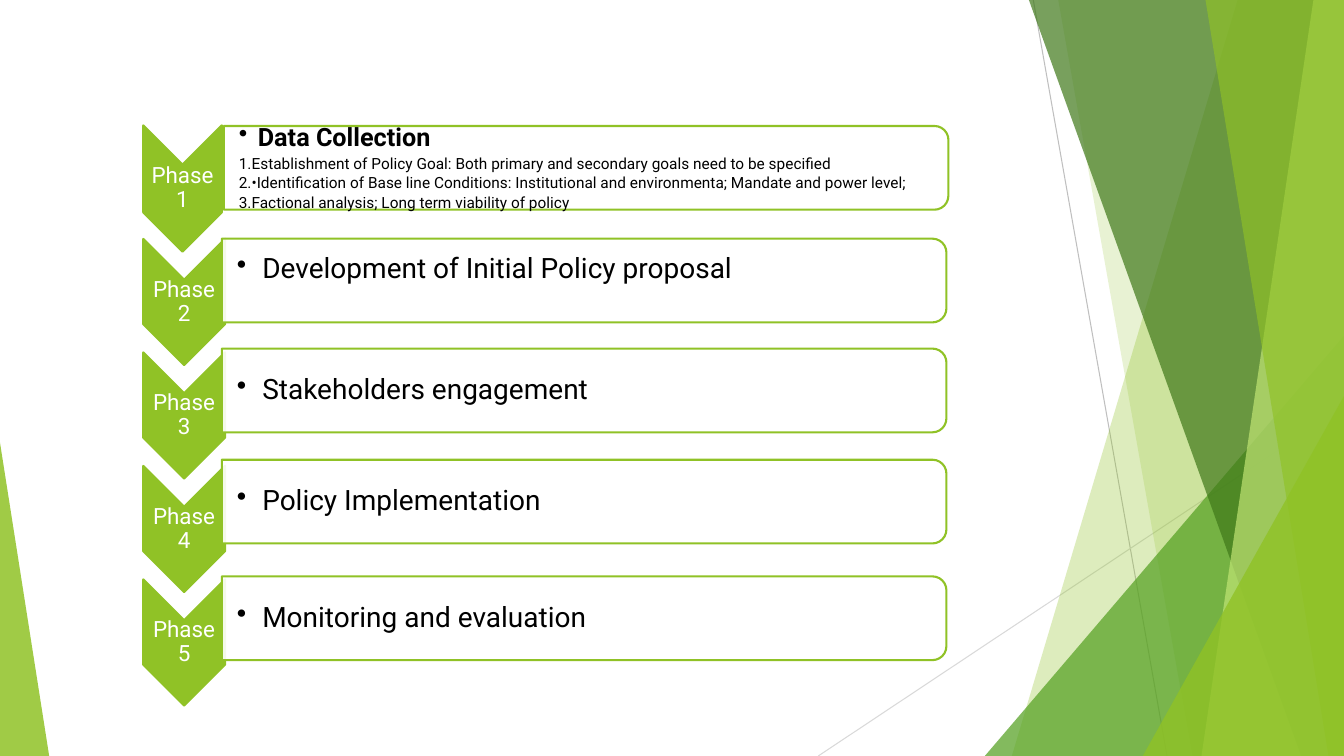
from dataclasses import dataclass

from lxml import etree
from pptx import Presentation
from pptx.dml.color import RGBColor
from pptx.enum.shapes import MSO_CONNECTOR, MSO_SHAPE
from pptx.enum.text import MSO_ANCHOR, PP_ALIGN
from pptx.oxml.ns import qn
from pptx.util import Cm, Pt

CHEVRON = MSO_SHAPE.CHEVRON
BAR = MSO_SHAPE.ROUND_2_SAME_RECTANGLE
WEDGE = MSO_SHAPE.ISOSCELES_TRIANGLE
STRAIGHT = MSO_CONNECTOR.STRAIGHT
MIDDLE = MSO_ANCHOR.MIDDLE
CENTER = PP_ALIGN.CENTER


@dataclass
class Theme:
    font: str = "Roboto"
    lime: str = "90C226"
    green: str = "54A021"
    dark: str = "3F7819"
    pale: str = "C0E474"
    white: str = "FFFFFF"
    black: str = "000000"
    gray: str = "BFBFBF"
    light: str = "D9D9D9"
    label: int = 16
    head: int = 18
    body: int = 20
    small: int = 11


theme = Theme()
WIDE, HIGH = 33.87, 19.05

deck = Presentation()
deck.slide_width, deck.slide_height = Cm(WIDE), Cm(HIGH)
slide = deck.slides.add_slide(deck.slide_layouts[6])
shapes = slide.shapes


def paint(shape, color, alpha=100, edge=None):
    """Fill a shape with a colour of the given opacity and set its outline."""
    shape.shadow.inherit = False
    shape.fill.solid()
    shape.fill.fore_color.rgb = RGBColor.from_string(color)
    if alpha < 100:
        tint = shape.fill._xPr.find(qn("a:solidFill"))[0]
        etree.SubElement(tint, qn("a:alpha"), val=str(alpha * 1000))
    if edge:
        shape.line.color.rgb = RGBColor.from_string(edge)
        shape.line.width = Pt(1.5)
    else:
        shape.line.fill.background()


def write(box, lines, color, left, right, low=0.03):
    """Fill a text box with (text, size, bold, bullet, indent) lines."""
    frame = box.text_frame
    frame.word_wrap = True
    frame.vertical_anchor = MIDDLE
    frame.margin_left, frame.margin_right = Cm(left), Cm(right)
    frame.margin_top, frame.margin_bottom = Cm(0.03), Cm(low)
    for n, (text, size, bold, mark, indent) in enumerate(lines):
        para = frame.add_paragraph() if n else frame.paragraphs[0]
        para.text = text
        para.line_spacing = 0.9
        para.font.name, para.font.size = theme.font, Pt(size)
        para.font.bold = bold
        para.font.color.rgb = RGBColor.from_string(color)
        if not mark:
            para.alignment = CENTER
            continue
        para.space_after = Pt(3 if size > theme.small else 2)
        props = para._p.get_or_add_pPr()
        props.set("marL", str(Cm(indent)))
        props.set("indent", str(-Cm(indent)))
        kind = "a:buChar" if mark == "•" else "a:buAutoNum"
        key = "char" if mark == "•" else "type"
        bullet = etree.Element(qn(kind), {key: mark})
        props.insert_element_before(bullet, "a:tabLst", "a:defRPr", "a:extLst")


# Thin lines behind the bands
for x1, y1, x2, y2, color in (
    (26.04, 0, 29.41, HIGH, theme.gray),
    (WIDE, 10.24, 20.62, HIGH, theme.light),
):
    line = shapes.add_connector(STRAIGHT, Cm(x1), Cm(y1), Cm(x2), Cm(y2))
    line.line.color.rgb = RGBColor.from_string(color)
    line.line.width = Pt(0.75)
    etree.SubElement(line._element.spPr, qn("a:effectLst"))

# Bands run to the right edge: (top x, foot x)
# Wedges stand on the bottom edge: (left, top, width, apex)
for place, color, alpha in (
    ((31.19, 25.5), theme.lime, 30),
    ((26.67, 30.05), theme.lime, 20),
    ((24.82, 8.46, 9.05, 1), theme.green, 72),
    ((25.93, 32.79), theme.dark, 70),
    ((33.1, 30.28), theme.pale, 70),
    ((30.38, 33.48), theme.lime, 65),
    ((28.8, 9.98, 5.07, 1), theme.lime, 80),
    ((0, 11.15, 1.24, 0), theme.lime, 85),
):
    if len(place) == 2:
        top, foot = place
        pen = shapes.build_freeform(Cm(top), 0)
        pen.add_line_segments(
            [(Cm(WIDE), 0), (Cm(WIDE), Cm(HIGH)), (Cm(foot), Cm(HIGH))]
        )
        part = pen.convert_to_shape()
    else:
        x, y, w, apex = place
        part = shapes.add_shape(WEDGE, Cm(x), Cm(y), Cm(w), Cm(HIGH - y))
        part.adjustments[0] = apex
    paint(part, color, alpha)

# Phases: bar middle x and y, chevron breadth, bottom inset, lines
goals = (
    "Establishment of Policy Goal: Both primary and secondary goals need to be specified",
    "•Identification of Base line Conditions: Institutional and environmenta; Mandate and power level;",
    "Factional analysis; Long term viability of policy",
)
first = [("Data Collection", theme.head, True, "•", 0.48)]
first += [(goal, theme.small, False, "arabicPeriod", 0.16) for goal in goals]
phases = [(14.77, 4.23, 1.98, 0.03, first)]
for mid, low, title in (
    (7.07, 0.6, "Development of Initial Policy proposal"),
    (9.84, 0.03, "Stakeholders engagement"),
    (12.64, 0.03, "Policy Implementation"),
    (15.58, 0.03, "Monitoring and evaluation"),
):
    phases.append((14.72, mid, 2.06, low, [(title, theme.body, False, "•", 0.64)]))

LONG, THICK = 18.26, 2.11
REACH, EDGE, PITCH = 3.18, 3.61, 2.86
for n, (x, y, breadth, low, lines) in enumerate(phases):
    # Chevron with its label
    hub, mid = EDGE + breadth / 2, 4.75 + n * PITCH
    arrow = shapes.add_shape(
        CHEVRON, Cm(hub - REACH / 2), Cm(mid - breadth / 2), Cm(REACH), Cm(breadth)
    )
    arrow.rotation = 90
    paint(arrow, theme.lime, edge=theme.lime)
    label = shapes.add_textbox(Cm(EDGE), Cm(mid - 0.56), Cm(breadth), Cm(1.12))
    name = [(f"Phase {n + 1}", theme.label, False, None, 0)]
    write(label, name, theme.white, 0.1, 0.1)

    # Bar with its text
    bar = shapes.add_shape(
        BAR, Cm(x - THICK / 2), Cm(y - LONG / 2), Cm(THICK), Cm(LONG)
    )
    bar.rotation = 90
    paint(bar, theme.white, 90, theme.lime)
    body = shapes.add_textbox(Cm(x - LONG / 2), Cm(y - 0.95), Cm(18.16), Cm(1.9))
    write(body, lines, theme.black, 0.38, 0.03, low)

deck.save("out.pptx")
